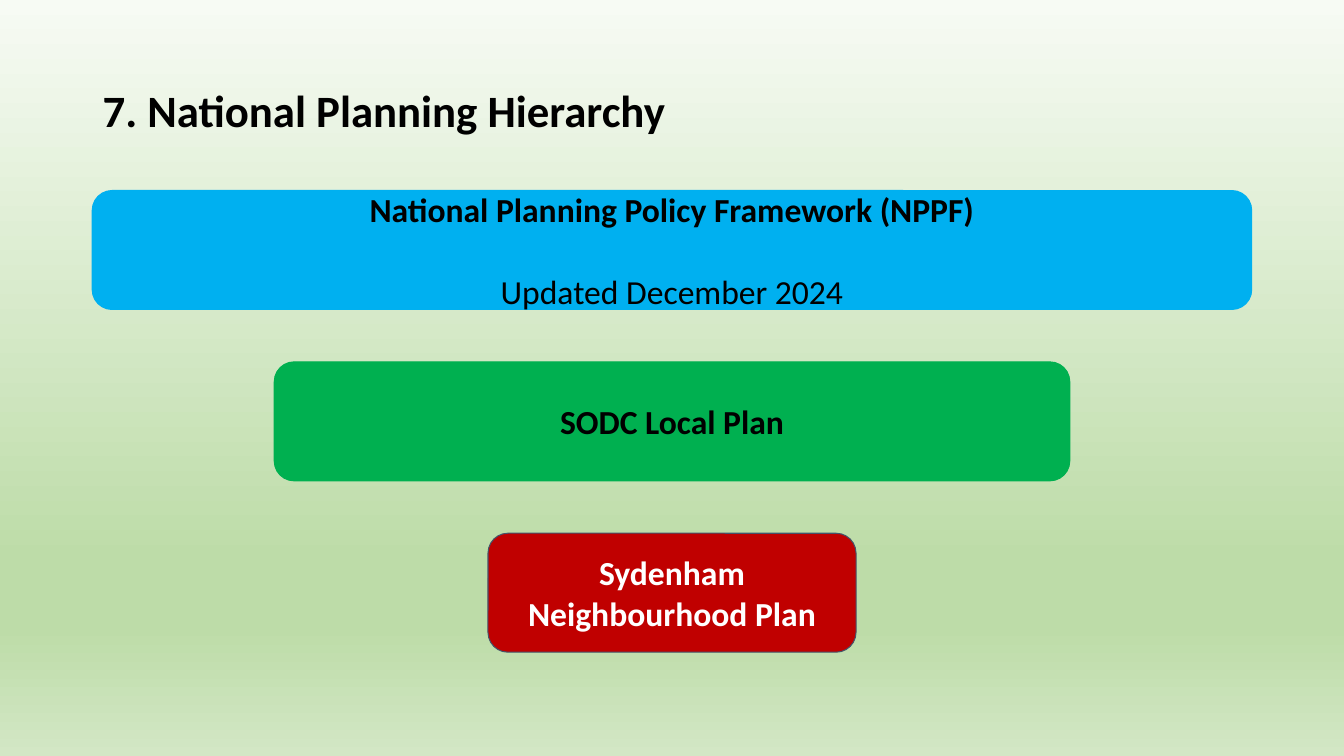
from lxml import etree
from pptx import Presentation, util as u
from pptx.dml.color import RGBColor
from pptx.enum import shapes, text
from pptx.oxml.ns import qn

SLIDE_WIDTH, SLIDE_HEIGHT = 13.33, 7.5
BACKGROUND_STOPS = [(0, "F7FBF4"), (74, "BDDCA8"), (83, "BDDCA8"), (100, "D3E7C5")]
TIER_TOP, TIER_HEIGHT, TIER_PITCH = 1.89, 1.18, 1.7

# width, fill, line, text colour, lines as (wording, bold, points before)
TIERS = [
    (11.5, "00B0F0", "00B0F0", "000000", [
        ("National Planning Policy Framework (NPPF)", True, 0),
        ("Updated December 2024", False, 29.3)]),
    (7.89, "00B050", "00B050", "000000", [("SODC Local Plan", True, 0)]),
    (3.65, "C00000", "44546A", "FFFFFF", [
        ("Sydenham", True, 0),
        ("Neighbourhood Plan", True, 0)]),
]


def color(hex_value):
    return RGBColor.from_string(hex_value)


class HierarchySlide:
    font_name = "Calibri"
    title_size = 32
    tier_size = 24

    def __init__(self, presentation):
        self.slide = presentation.slides.add_slide(presentation.slide_layouts[6])

    def background(self, stops):
        fill = self.slide.background.fill
        fill.gradient()
        fill.gradient_angle = 270
        stop_list = self.slide.element.find(".//" + qn("a:gsLst"))
        for old_stop in list(stop_list):
            stop_list.remove(old_stop)
        for percent, hex_value in stops:
            stop = etree.SubElement(stop_list, qn("a:gs"), pos=str(percent * 1000))
            etree.SubElement(stop, qn("a:srgbClr"), val=hex_value)

    def format_runs(self, paragraph, size, hex_value, bold):
        for run in paragraph.runs:
            run.font.name = self.font_name
            run.font.size = u.Pt(size)
            run.font.bold = bold
            run.font.color.rgb = color(hex_value)

    def frame(self, shape, vertical_inset):
        """Prepare a wrapping, vertically centred text frame."""
        frame = shape.text_frame
        frame.word_wrap = True
        frame.vertical_anchor = text.MSO_ANCHOR.MIDDLE
        frame.margin_left = frame.margin_right = u.Inches(0.1)
        frame.margin_top = frame.margin_bottom = u.Inches(vertical_inset)
        return frame

    def title(self, wording):
        box = self.slide.shapes.add_textbox(
            u.Inches(0.92), u.Inches(0.4), u.Inches(11.5), u.Inches(1.45))
        frame = self.frame(box, 0.05)
        frame.text = wording
        paragraph = frame.paragraphs[0]
        paragraph.line_spacing = 0.9
        self.format_runs(paragraph, self.title_size, "000000", True)

    def tier(self, top, width, fill, line, text_color, lines):
        """Add a rounded box centred across the slide."""
        shape = self.slide.shapes.add_shape(
            shapes.MSO_SHAPE.ROUNDED_RECTANGLE,
            u.Inches((SLIDE_WIDTH - width) / 2), u.Inches(top),
            u.Inches(width), u.Inches(TIER_HEIGHT))
        shape.shadow.inherit = False
        shape.fill.solid()
        shape.fill.fore_color.rgb = color(fill)
        shape.line.color.rgb = color(line)
        shape.line.width = u.Pt(0.75)
        frame = self.frame(shape, 0.1)
        frame.text = "\n".join(wording for wording, _, _ in lines)
        for paragraph, (_, bold, before) in zip(frame.paragraphs, lines):
            paragraph.alignment = text.PP_ALIGN.CENTER
            if before:
                paragraph.space_before = u.Pt(before)
            self.format_runs(paragraph, self.tier_size, text_color, bold)


def main():
    presentation = Presentation()
    presentation.slide_width = u.Inches(SLIDE_WIDTH)
    presentation.slide_height = u.Inches(SLIDE_HEIGHT)
    hierarchy = HierarchySlide(presentation)
    hierarchy.background(BACKGROUND_STOPS)
    hierarchy.title("7. National Planning Hierarchy")
    for index, tier in enumerate(TIERS):
        hierarchy.tier(TIER_TOP + index * TIER_PITCH, *tier)
    presentation.save("out.pptx")


if __name__ == "__main__":
    main()
